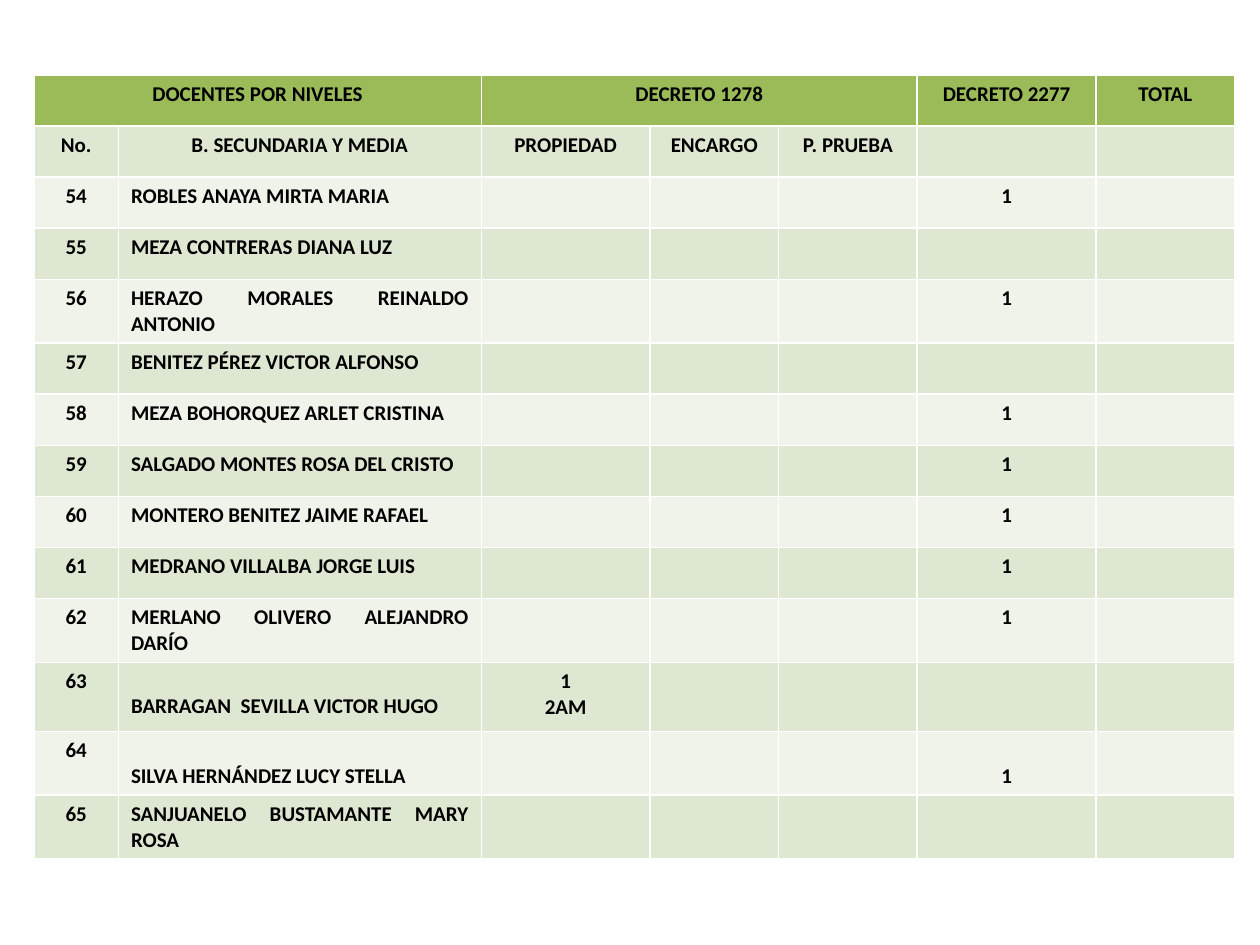
"""Build a slide with the table of secondary teachers by decree."""
from lxml.etree import SubElement
from pptx import Presentation
from pptx.dml.color import RGBColor
from pptx.enum.text import PP_ALIGN as Align
from pptx.oxml.ns import qn
from pptx.util import Inches, Pt


def color(hex_text):
    return RGBColor.from_string(hex_text)


def add_border(cell, side):
    line = SubElement(cell._tc.get_or_add_tcPr(), qn(f"a:ln{side}"), w=str(Pt(1)))
    fill = SubElement(line, qn("a:solidFill"))
    SubElement(fill, qn("a:srgbClr"), val="FFFFFF")


HEADER_FILL, DARK_BAND, LIGHT_BAND = "9BBB59", "DEE7D1", "EFF3EA"
COLUMN_WIDTHS = [0.67, 2.88, 1.34, 1.02, 1.1, 1.42, 1.1]
ROW_HEIGHT, TWO_LINE_HEIGHT, TALL_HEIGHT = 0.4, 0.5, 0.55
LOWERED_TEXT_MARGIN = 0.25
FIRST_NUMBER = 54

teachers = [
    ("ROBLES ANAYA MIRTA MARIA", "", "1"),
    ("MEZA CONTRERAS DIANA LUZ", "", ""),
    ("HERAZO MORALES REINALDO ANTONIO", "", "1"),
    ("BENITEZ PÉREZ VICTOR ALFONSO", "", ""),
    ("MEZA BOHORQUEZ ARLET CRISTINA", "", "1"),
    ("SALGADO MONTES ROSA DEL CRISTO", "", "1"),
    ("MONTERO BENITEZ JAIME RAFAEL", "", "1"),
    ("MEDRANO VILLALBA JORGE LUIS", "", "1"),
    ("MERLANO OLIVERO ALEJANDRO DARÍO", "", "1"),
    ("BARRAGAN  SEVILLA VICTOR HUGO", "1\n2AM", ""),
    ("SILVA HERNÁNDEZ LUCY STELLA", "", "1"),
    ("SANJUANELO BUSTAMANTE MARY ROSA", "", ""),
]
rows = [
    ["DOCENTES POR NIVELES", "", "DECRETO 1278", "", "", "DECRETO 2277", "TOTAL"],
    ["No.", "B. SECUNDARIA Y MEDIA", "PROPIEDAD", "ENCARGO", "P. PRUEBA", "", ""],
]
for number, (name, tenured, decree_2277) in enumerate(teachers, FIRST_NUMBER):
    rows.append([str(number), name, tenured, "", "", decree_2277, ""])

row_heights = {"56": TWO_LINE_HEIGHT, "62": TWO_LINE_HEIGHT, "63": TALL_HEIGHT,
               "64": TWO_LINE_HEIGHT, "65": TWO_LINE_HEIGHT}
lowered_cells = {("63", 1), ("64", 1), ("64", 5)}

presentation = Presentation()
presentation.slide_width = Inches(10)
presentation.slide_height = Inches(7.5)
slide = presentation.slides.add_slide(presentation.slide_layouts[6])

heights = [row_heights.get(row[0], ROW_HEIGHT) for row in rows]
shape = slide.shapes.add_table(len(rows), len(COLUMN_WIDTHS), Inches(0.27), Inches(0.6),
                               Inches(sum(COLUMN_WIDTHS)), Inches(sum(heights)))
table = shape.table
for column, width in zip(table.columns, COLUMN_WIDTHS):
    column.width = Inches(width)
for table_row, height in zip(table.rows, heights):
    table_row.height = Inches(height)
table.cell(0, 0).merge(table.cell(0, 1))
table.cell(0, 2).merge(table.cell(0, 4))

for row_index, row in enumerate(rows):
    band = DARK_BAND if row_index % 2 else LIGHT_BAND
    for column_index, text in enumerate(row):
        cell = table.cell(row_index, column_index)
        for side in "LRTB":
            add_border(cell, side)
        cell.fill.solid()
        cell.fill.fore_color.rgb = color(band if row_index else HEADER_FILL)
        if (row[0], column_index) in lowered_cells:
            cell.margin_top = Inches(LOWERED_TEXT_MARGIN)
        if not text:
            continue
        is_name = row_index > 1 and column_index == 1
        for line_index, line in enumerate(text.split("\n")):
            frame = cell.text_frame
            paragraph = frame.add_paragraph() if line_index else frame.paragraphs[0]
            paragraph.alignment = Align.JUSTIFY if is_name else Align.CENTER
            run = paragraph.add_run()
            run.text = line
            run.font.name = "Calibri"
            run.font.size = Pt(12)
            run.font.bold = True
            run.font.color.rgb = color("000000")

presentation.save("out.pptx")
